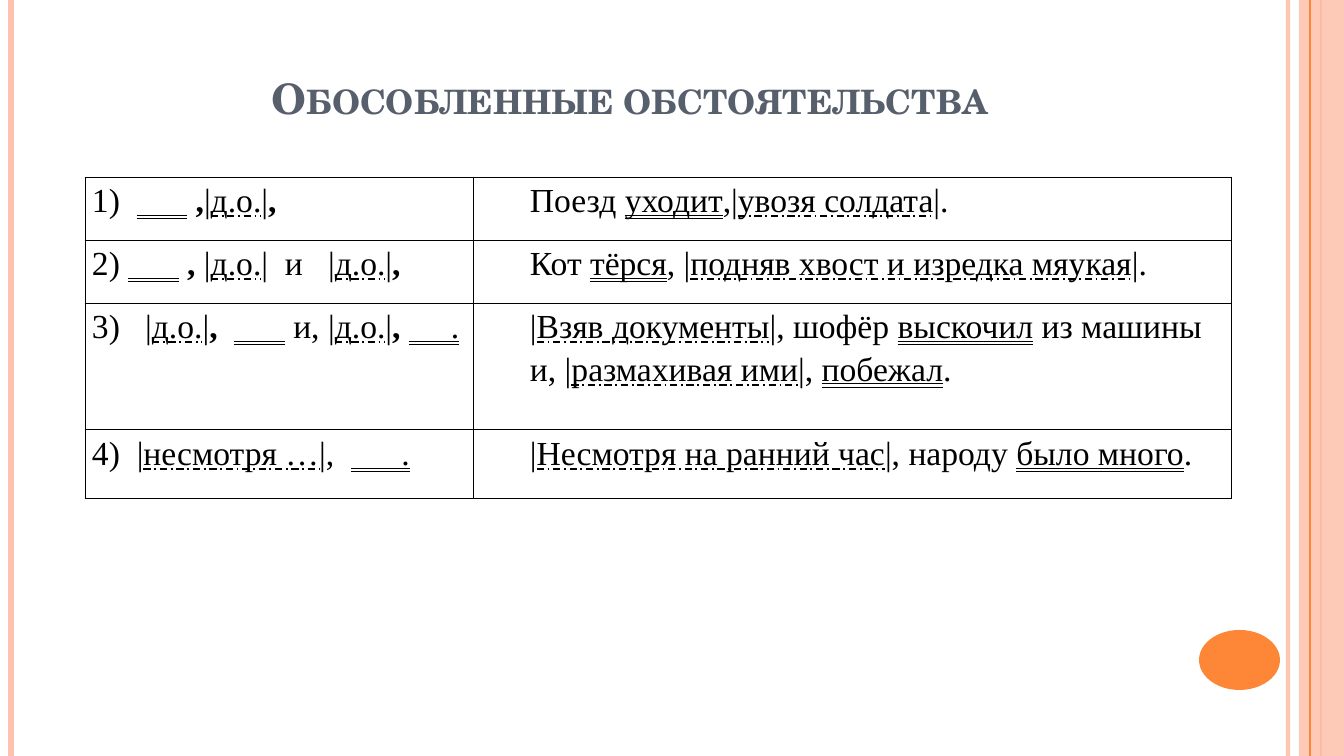
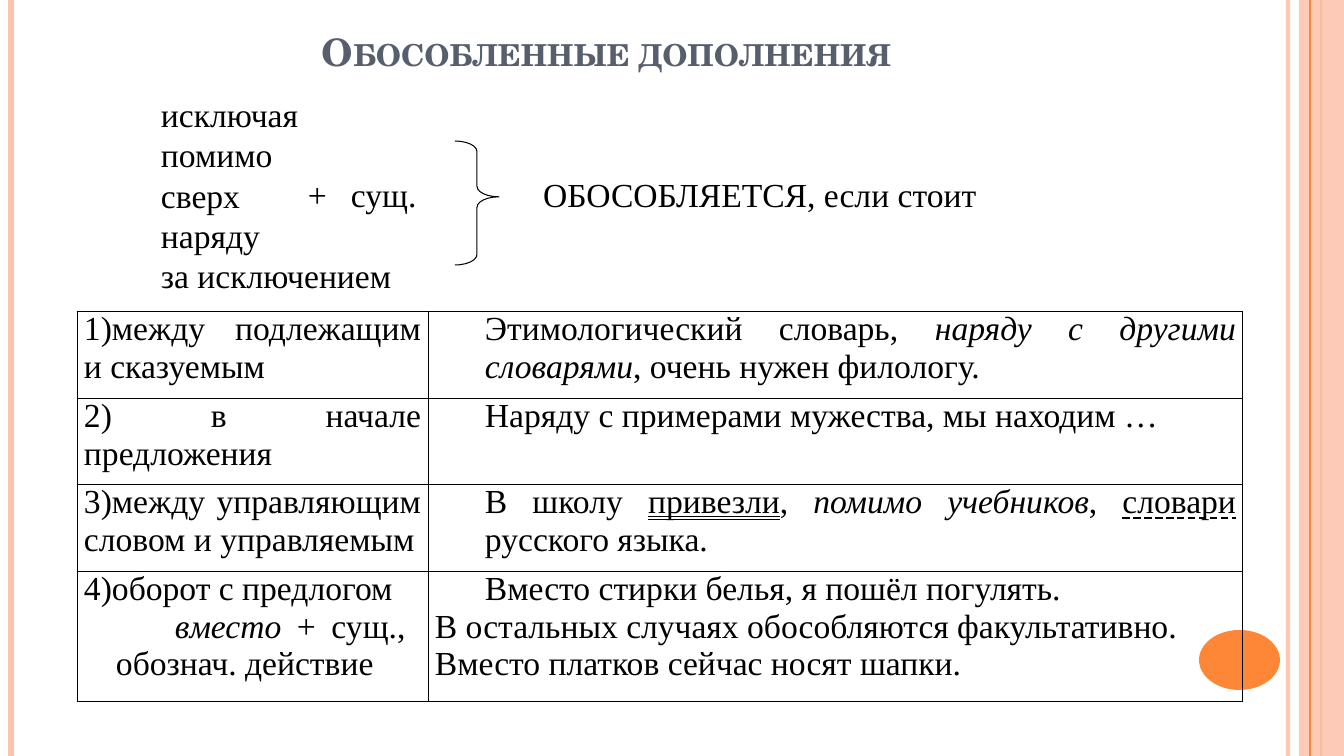
from pptx import Presentation
from pptx.dml.color import RGBColor
from pptx.enum.shapes import MSO_CONNECTOR, MSO_SHAPE
from pptx.enum.text import MSO_ANCHOR, MSO_UNDERLINE as UNDERLINE, PP_ALIGN as ALIGN
from pptx.oxml.ns import qn
from pptx.util import Pt
from lxml.etree import SubElement

PX = 914400 / 100.8
WIDTH, HEIGHT = 1344, 756
COLORS = {"ink": "000000", "title": "575F6D", "peach": "FEC3AE", "orange": "FE8637"}
TITLE_FONT, BODY_FONT = "TeX Gyre Schola", "Times New Roman"
INDENT = 50

# Inline marks: each pair encloses a styled stretch of text
MARKS = {
    "=": ("underline", UNDERLINE.DOUBLE_LINE),
    "~": ("underline", UNDERLINE.DOT_DASH_LINE),
    "^": ("underline", UNDERLINE.DASH_LINE),
    "*": ("bold", True),
    "_": ("italic", True),
}


def px(*lengths):
    return [round(length * PX) for length in lengths]


def rgb(name):
    return RGBColor.from_string(COLORS[name])


def split_marks(text):
    """Yield (stretch, mark) pairs; mark is None for plain text."""
    stretch, mark = "", None
    for char in text:
        if char in MARKS:
            if stretch:
                yield stretch, mark
            stretch, mark = "", None if mark else char
        else:
            stretch += char
    if stretch:
        yield stretch, mark


class Deck:
    def __init__(self):
        self.prs = Presentation()
        self.prs.slide_width, self.prs.slide_height = px(WIDTH, HEIGHT)
        self.slide = None

    def new_slide(self):
        self.slide = self.prs.slides.add_slide(self.prs.slide_layouts[6])
        self.rule(1288, "peach", 3, alpha=93)
        self.rule(11, "peach", 4.5)
        self.rule(1321, "orange", 1.5)
        self.shape(MSO_SHAPE.RECTANGLE, (1299, 0, 45, HEIGHT), "peach", alpha=87)
        self.rule(1310, "orange", 1)
        self.shape(MSO_SHAPE.OVAL, (1199, 630, 81, 60), "orange")

    def set_alpha(self, element, percent):
        for color in element.iter(qn("a:srgbClr")):
            SubElement(color, qn("a:alpha"), val=str(percent * 1000))

    def rule(self, x, color, weight, alpha=None):
        line = self.slide.shapes.add_connector(MSO_CONNECTOR.STRAIGHT, *px(x, 0, x, HEIGHT))
        line.line.color.rgb = rgb(color)
        line.line.width = Pt(weight)
        properties = line._element.spPr
        SubElement(properties, qn("a:effectLst"))
        if alpha:
            self.set_alpha(properties, alpha)

    def shape(self, kind, box, fill=None, line=None, alpha=None):
        shape = self.slide.shapes.add_shape(kind, *px(*box))
        shape.shadow.inherit = False
        if fill:
            shape.fill.solid()
            shape.fill.fore_color.rgb = rgb(fill)
        else:
            shape.fill.background()
        if line:
            shape.line.color.rgb = rgb(line)
            shape.line.width = Pt(0.75)
        else:
            shape.line.fill.background()
        if alpha:
            self.set_alpha(shape._element.spPr, alpha)
        return shape

    def style(self, paragraph, font, size, color, bold=None):
        paragraph.font.name = font
        paragraph.font.size = Pt(size)
        paragraph.font.color.rgb = rgb(color)
        paragraph.font.bold = bold

    def title(self, text, box, size, align=ALIGN.LEFT):
        frame = self.slide.shapes.add_textbox(*px(*box)).text_frame
        frame.word_wrap = True
        frame.vertical_anchor = MSO_ANCHOR.BOTTOM
        paragraph = frame.paragraphs[0]
        paragraph.alignment = align
        self.style(paragraph, TITLE_FONT, size, "title", bold=True)
        run = paragraph.add_run()
        run.text = text
        run._r.get_or_add_rPr().set("cap", "small")

    def body(self, paragraph, text, margin=0, first=0):
        self.style(paragraph, BODY_FONT, 24, "ink")
        properties = paragraph._p.get_or_add_pPr()
        for name, length in zip(("marL", "indent"), px(margin, first)):
            properties.set(name, str(length))
        for stretch, mark in split_marks(text):
            run = paragraph.add_run()
            run.text = stretch
            if mark:
                setattr(run.font, *MARKS[mark])

    def text(self, lines, box):
        frame = self.slide.shapes.add_textbox(*px(*box)).text_frame
        frame.word_wrap = True
        frame.margin_left = frame.margin_right = 0
        frame.margin_top = frame.margin_bottom = 0
        for number, line in enumerate(lines):
            self.body(frame.add_paragraph() if number else frame.paragraphs[0], line)

    def border(self, cell):
        properties = cell._tc.get_or_add_tcPr()
        for side in ("lnL", "lnR", "lnT", "lnB"):
            line = SubElement(properties, qn("a:" + side), w=str(Pt(0.75)))
            fill = SubElement(line, qn("a:solidFill"))
            SubElement(fill, qn("a:srgbClr"), val=COLORS["ink"])

    def table(self, rows, corner, widths, heights, align=ALIGN.LEFT, spacing=1.0):
        """A cell is a list of (text, margin, first-line indent) paragraphs."""
        box = px(*corner, sum(widths), sum(heights))
        table = self.slide.shapes.add_table(len(rows), len(widths), *box).table
        table.first_row = table.horz_banding = False
        for column, width in zip(table.columns, px(*widths)):
            column.width = width
        for row, height, contents in zip(table.rows, px(*heights), rows):
            row.height = height
            for cell, paragraphs in zip(row.cells, contents):
                self.border(cell)
                cell.fill.background()
                cell.margin_left, cell.margin_right = px(7, 7)
                cell.margin_top = cell.margin_bottom = 0
                for number, content in enumerate(paragraphs):
                    frame = cell.text_frame
                    paragraph = frame.add_paragraph() if number else frame.paragraphs[0]
                    paragraph.alignment = align
                    paragraph.line_spacing = spacing
                    self.body(paragraph, *content)


def pair(rule, example):
    return [(rule,)], [(example, INDENT)]


def adverbials(deck):
    deck.new_slide()
    deck.title("Обособленные обстоятельства", (81, 55, 1098, 73), 30, ALIGN.CENTER)
    rows = [
        pair("1)  =      = *,*|~д.о.~|*,*",
             "Поезд =уходит=,|~увозя солдата~|."),
        pair("2) =      = *,* |~д.о.~|  и   |~д.о.~|*,*",
             "Кот =тёрся=, |~подняв хвост и изредка мяукая~|."),
        pair("3)   |~д.о.~|*,  *=      = и, |~д.о.~|*, *=     .=",
             "|~Взяв документы~|, шофёр =выскочил= из машины и, "
             "|~размахивая ими~|, =побежал=."),
        pair("4)  |~несмотря …~|,  =      .=",
             "|~Несмотря на ранний час~|, народу =было много=."),
    ]
    deck.table(rows, (85, 177), (388, 759), (63, 63, 127, 69), spacing=1.15)


def objects(deck):
    deck.new_slide()
    deck.title("Обособленные дополнения", (312, 20, 629, 59), 27)

    # Rules and examples
    rows = [
        pair("1)между подлежащим и сказуемым",
             "Этимологический словарь, _наряду с другими словарями_, очень нужен филологу."),
        pair("2) в начале предложения",
             "Наряду с примерами мужества, мы находим …"),
        pair("3)между управляющим словом и управляемым",
             "В школу =привезли=, _помимо учебников_, ^словари^ русского языка."),
        ([("4)оборот с предлогом",),
          ("_вместо_ + сущ.,  обознач. действие", 32, 59)],
         [("Вместо стирки белья, я пошёл погулять.", INDENT),
          ("В остальных случаях обособляются факультативно.",),
          ("Вместо платков сейчас носят шапки.",)]),
    ]
    deck.table(rows, (77, 311), (351, 815), (87, 86, 87, 131), ALIGN.JUSTIFY)

    # Prepositions joined by a brace
    brace = deck.shape(MSO_SHAPE.RIGHT_BRACE, (455, 141, 44, 124), line="ink")
    brace.adjustments[0], brace.adjustments[1] = 0.24, 0.45
    prepositions = ["исключая", "помимо", "сверх", "наряду", "за исключением"]
    top, pitch = 94, 40
    deck.text(prepositions, (161, top, 270, pitch * len(prepositions)))

    # The rest of the formula, level with the middle preposition
    middle = top + pitch * (len(prepositions) // 2)
    formula = [("+", 308, 30), ("сущ.", 351, 90), ("ОБОСОБЛЯЕТСЯ, если стоит", 543, 500)]
    for term, left, width in formula:
        deck.text([term], (left, middle, width, pitch))


def main():
    deck = Deck()
    adverbials(deck)
    objects(deck)
    deck.prs.save("out.pptx")


if __name__ == "__main__":
    main()
